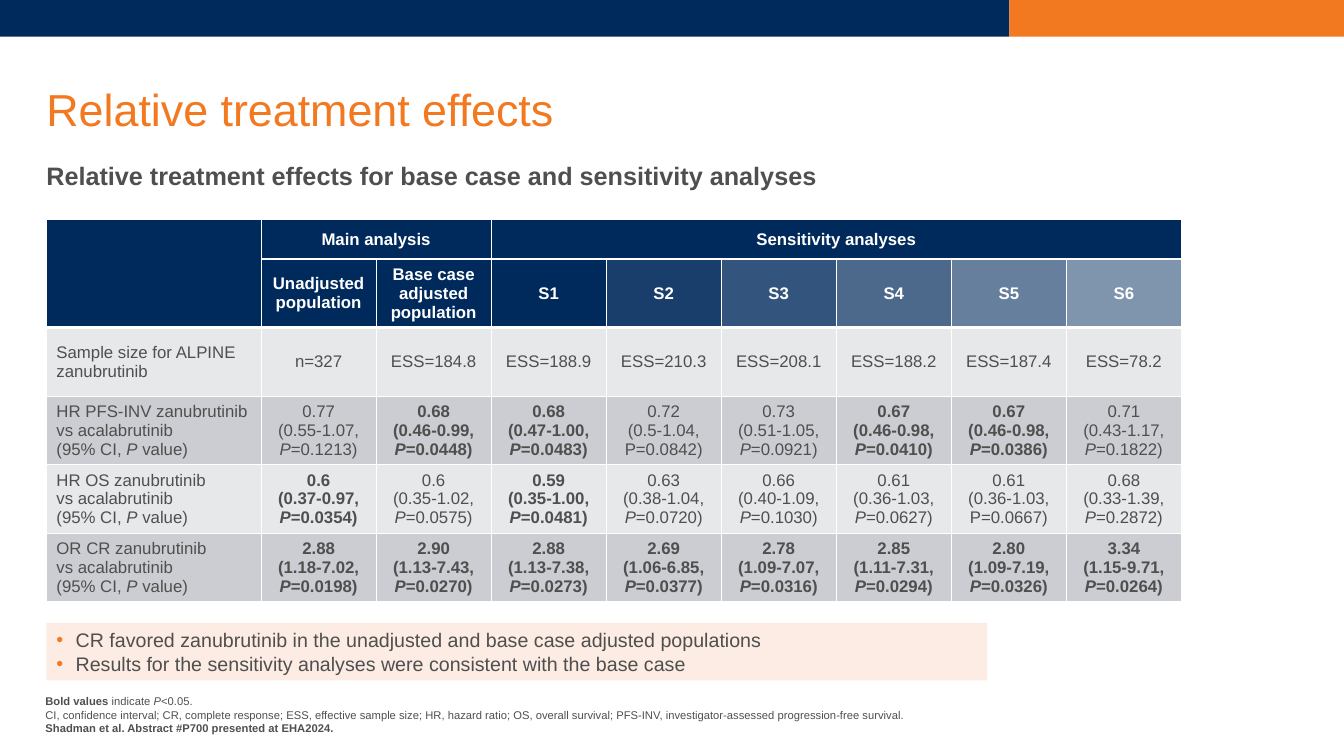
from dataclasses import dataclass

from lxml import etree
from pptx import Presentation
from pptx import util as u
from pptx.dml.color import RGBColor
from pptx.enum import shapes, text
from pptx.oxml import ns


@dataclass(frozen=True)
class Theme:
    font: str = "Arial"
    navy: str = "002A5C"
    orange: str = "F37920"
    gray: str = "4E4F4E"
    white: str = "FFFFFF"
    light_band: str = "E7E8EA"
    dark_band: str = "CCCDD2"
    peach: str = "FDECE3"
    title_size: int = 32
    subtitle_size: int = 18
    list_size: int = 14
    table_size: int = 12
    note_size: int = 8


LEFT = 3.45
TEXT_WIDTH = 93.25
LIST_WIDTH = 70
SPLIT = 75.1
COLUMNS = [15.98] + [8.56] * 8
ROWS = [5.2] + [9.07] * 5

POPULATIONS = ["Unadjusted population", "Base case adjusted population"]
SCENARIOS = [f"S{number}" for number in range(1, 7)]
SAMPLE_SIZES = ["n=327", "ESS=184.8", "ESS=188.9", "ESS=210.3",
                "ESS=208.1", "ESS=188.2", "ESS=187.4", "ESS=78.2"]
EFFECTS = {
    "HR PFS-INV": [
        ("0.77", "0.55-1.07", "_P_=0.1213"), ("0.68", "0.46-0.99", "_P_=0.0448"),
        ("0.68", "0.47-1.00", "_P_=0.0483"), ("0.72", "0.5-1.04", "P=0.0842"),
        ("0.73", "0.51-1.05", "_P_=0.0921"), ("0.67", "0.46-0.98", "_P_=0.0410"),
        ("0.67", "0.46-0.98", "_P_=0.0386"), ("0.71", "0.43-1.17", "_P_=0.1822"),
    ],
    "HR OS": [
        ("0.6", "0.37-0.97", "_P_=0.0354"), ("0.6", "0.35-1.02", "_P_=0.0575"),
        ("0.59", "0.35-1.00", "_P_=0.0481"), ("0.63", "0.38-1.04", "_P_=0.0720"),
        ("0.66", "0.40-1.09", "_P_=0.1030"), ("0.61", "0.36-1.03", "_P_=0.0627"),
        ("0.61", "0.36-1.03", "P=0.0667"), ("0.68", "0.33-1.39", "_P_=0.2872"),
    ],
    "OR CR": [
        ("2.88", "1.18-7.02", "_P_=0.0198"), ("2.90", "1.13-7.43", "_P_=0.0270"),
        ("2.88", "1.13-7.38", "_P_=0.0273"), ("2.69", "1.06-6.85", "_P_=0.0377"),
        ("2.78", "1.09-7.07", "_P_=0.0316"), ("2.85", "1.11-7.31", "_P_=0.0294"),
        ("2.80", "1.09-7.19", "_P_=0.0326"), ("3.34", "1.15-9.71", "_P_=0.0264"),
    ],
}


def add_element(parent, tag, **attributes):
    return etree.SubElement(parent, ns.qn(tag), attributes)


def write(frame, lines, *, font, size, color, bold=False, align="LEFT",
          anchor="MIDDLE", spacing=1.0, bullet=None):
    """Fill a text frame; *...* toggles bold and _..._ toggles italic."""
    frame.word_wrap = True
    frame.vertical_anchor = text.MSO_ANCHOR[anchor]
    for number, line in enumerate(lines):
        para = frame.add_paragraph() if number else frame.paragraphs[0]
        properties = para._p.get_or_add_pPr()
        indent = u.Inches(0.19) if bullet else 0
        properties.set("marL", str(indent))
        properties.set("indent", str(-indent))
        if bullet:
            add_element(add_element(properties, "a:buClr"), "a:srgbClr", val=bullet)
            add_element(properties, "a:buChar", char="•")
        else:
            add_element(properties, "a:buNone")
        para.alignment = text.PP_ALIGN[align]
        para.line_spacing = spacing
        para.space_before = u.Pt(0)
        for strong, part in enumerate(line.split("*")):
            for slanted, words in enumerate(part.split("_")):
                if words:
                    span = para.add_run()
                    span.text = words
                    span.font.name = font
                    span.font.size = u.Pt(size)
                    span.font.bold = bold or strong % 2 == 1
                    span.font.italic = slanted % 2 == 1
                    span.font.color.rgb = RGBColor.from_string(color)


class SlideBuilder:
    def __init__(self, deck, theme):
        self.theme = theme
        self.column = deck.slide_width / 100
        self.row = deck.slide_height / 100
        self.page = deck.slides.add_slide(deck.slide_layouts[3])

    def area(self, left, top, width, height):
        return (round(left * self.column), round(top * self.row),
                round(width * self.column), round(height * self.row))

    def paint(self, fill, color):
        fill.solid()
        fill.fore_color.rgb = RGBColor.from_string(color)

    def band(self, left, width, color):
        box = self.page.shapes.add_shape(
            shapes.MSO_SHAPE.RECTANGLE, *self.area(left, 0, width, 4.87))
        box.shadow.inherit = False
        box.line.fill.background()
        self.paint(box.fill, color)

    def fill_text(self, box, lines, inset, **style):
        frame = box.text_frame
        frame.auto_size = text.MSO_AUTO_SIZE.NONE
        frame.margin_left = frame.margin_right = u.Inches(inset)
        frame.margin_top = frame.margin_bottom = u.Inches(inset / 2)
        write(frame, lines, font=self.theme.font, **style)

    def placeholder(self, index, area, lines, fill=None, inset=0, **style):
        box = self.page.placeholders[index]
        box.left, box.top, box.width, box.height = self.area(*area)
        if fill:
            self.paint(box.fill, fill)
        self.fill_text(box, lines, inset, **style)

    def note(self, area, lines, **style):
        box = self.page.shapes.add_textbox(*self.area(*area))
        self.fill_text(box, lines, 0, **style)

    def table(self, left, top, columns, rows):
        frame = self.page.shapes.add_table(
            len(rows), len(columns), *self.area(left, top, sum(columns), sum(rows)))
        grid = frame.table
        grid.first_row = grid.horz_banding = False
        for column, width in zip(grid.columns, columns):
            column.width = round(width * self.column)
        for row, height in zip(grid.rows, rows):
            row.height = round(height * self.row)
        return grid

    def cell(self, cell, lines, fill, opacity=100, top=1, bottom=1, **style):
        properties = cell._tc.get_or_add_tcPr()
        for side, width in (("L", 1), ("R", 1), ("T", top), ("B", bottom)):
            line = add_element(properties, f"a:ln{side}", w=str(u.Pt(width)))
            solid = add_element(line, "a:solidFill")
            add_element(solid, "a:srgbClr", val=self.theme.white)
        self.paint(cell.fill, fill)
        if opacity < 100:
            color = properties.find(ns.qn("a:solidFill")).find(ns.qn("a:srgbClr"))
            add_element(color, "a:alpha", val=str(opacity * 1000))
        cell.margin_left = cell.margin_right = u.Inches(0.1)
        cell.margin_top = cell.margin_bottom = u.Inches(0.04)
        cell.vertical_anchor = text.MSO_ANCHOR.MIDDLE
        write(cell.text_frame, lines, font=self.theme.font,
              size=self.theme.table_size, **style)


def add_effects_table(builder):
    theme = builder.theme
    grid = builder.table(LEFT, 29.07, COLUMNS, ROWS)
    groups = {1: "Main analysis", 3: "Sensitivity analyses"}
    header = dict(color=theme.white, bold=True, align="CENTER")
    for index, heading in enumerate([""] + POPULATIONS + SCENARIOS):
        builder.cell(grid.cell(0, index), [groups.get(index, "")], theme.navy,
                     bottom=1 if index else 3, **header)
        builder.cell(grid.cell(1, index), [heading], theme.navy, bottom=3,
                     opacity=100 - 10 * max(0, index - 3), **header)
    for start, end in (((0, 0), (1, 0)), ((0, 1), (0, 2)), ((0, 3), (0, 8))):
        grid.cell(*start).merge(grid.cell(*end))

    sample_row = ["Sample size for ALPINE zanubrutinib"] + SAMPLE_SIZES
    for index, words in enumerate(sample_row):
        builder.cell(grid.cell(2, index), [words], theme.light_band, top=3,
                     color=theme.gray, align="CENTER" if index else "LEFT")

    for row, (measure, results) in enumerate(EFFECTS.items(), 3):
        fill = theme.dark_band if row % 2 else theme.light_band
        label = [f"{measure} zanubrutinib", "vs acalabrutinib", "(95% CI, _P_ value)"]
        builder.cell(grid.cell(row, 0), label, fill, color=theme.gray)
        for index, (estimate, interval, p_value) in enumerate(results, 1):
            significant = float(p_value.split("=")[1]) < 0.05
            builder.cell(grid.cell(row, index), [estimate, f"({interval}, {p_value})"],
                         fill, color=theme.gray, bold=significant, align="CENTER")


def main():
    deck = Presentation()
    deck.slide_width, deck.slide_height = u.Inches(13.33), u.Inches(7.5)
    theme = Theme()
    builder = SlideBuilder(deck, theme)
    builder.band(0, SPLIT, theme.navy)
    builder.band(SPLIT, 100 - SPLIT, theme.orange)
    builder.placeholder(0, (LEFT, 8.4, TEXT_WIDTH, 9.6), ["Relative treatment effects"],
                        size=theme.title_size, color=theme.orange,
                        anchor="BOTTOM", spacing=0.9)
    builder.placeholder(1, (LEFT, 18.67, TEXT_WIDTH, 9.47),
                        ["Relative treatment effects for base case and sensitivity analyses"],
                        size=theme.subtitle_size, color=theme.gray, bold=True, spacing=0.9)
    add_effects_table(builder)
    builder.placeholder(2, (LEFT, 82.4, LIST_WIDTH, 7.6), [
        "CR favored zanubrutinib in the unadjusted and base case adjusted populations",
        "Results for the sensitivity analyses were consistent with the base case",
    ], fill=theme.peach, inset=0.1, size=theme.list_size, color=theme.gray, bullet=theme.orange)
    builder.note((3.38, 91.6, LIST_WIDTH, 5.6), [
        "*Bold values* indicate _P_<0.05.",
        "CI, confidence interval; CR, complete response; ESS, effective sample size; "
        "HR, hazard ratio; OS, overall survival; PFS-INV, investigator-assessed "
        "progression-free survival.",
        "*Shadman et al. Abstract #P700 presented at EHA2024.*",
    ], size=theme.note_size, color=theme.gray, anchor="BOTTOM")
    deck.save("out.pptx")


if __name__ == "__main__":
    main()
